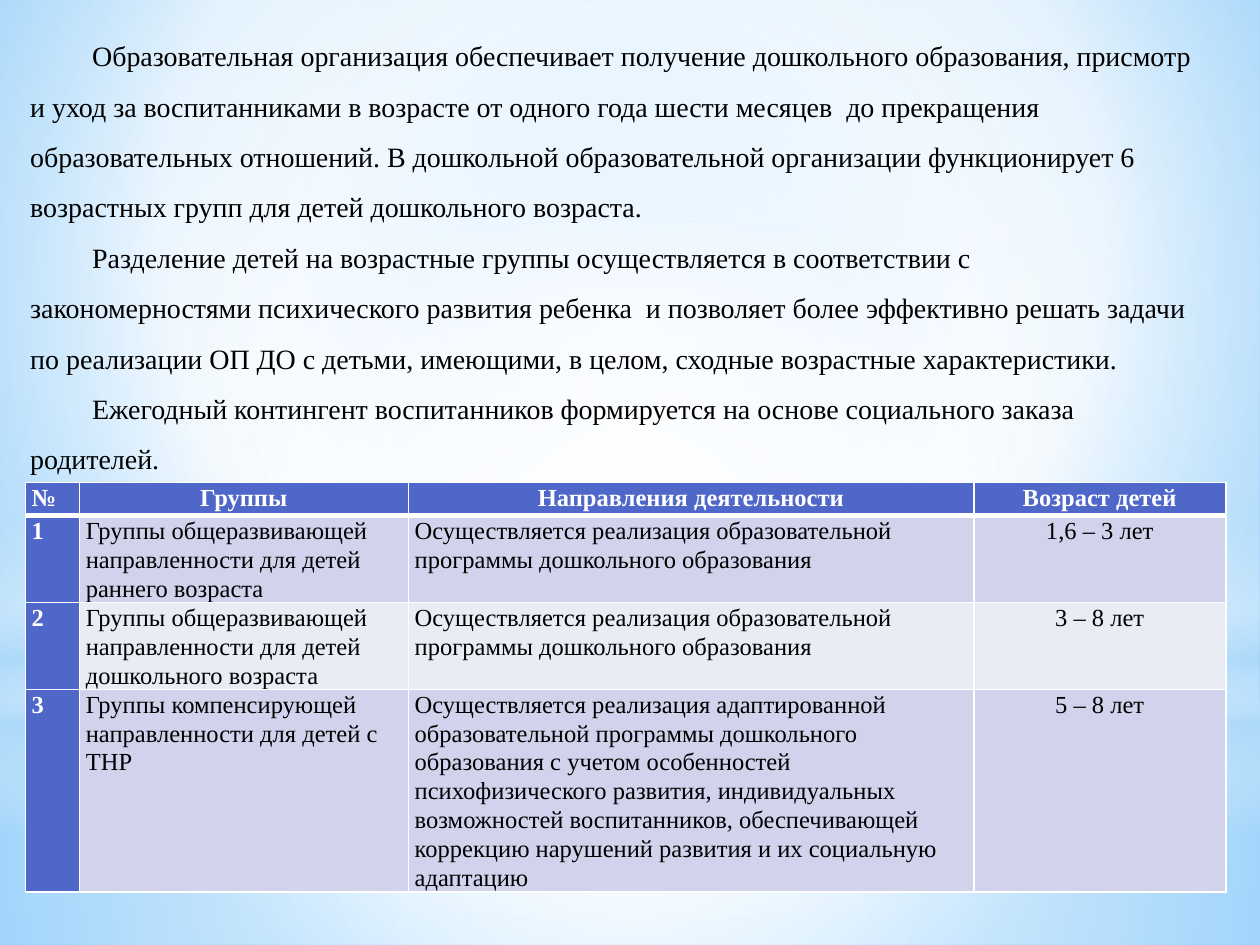
"""Builds the slide on preschool age groups with a table of their activities."""
from dataclasses import dataclass

from lxml import etree
from pptx import Presentation
from pptx.dml.color import RGBColor
from pptx.enum.shapes import MSO_SHAPE
from pptx.enum.text import MSO_ANCHOR, PP_ALIGN
from pptx.oxml import parse_xml
from pptx.oxml.ns import nsdecls, qn
from pptx.util import Cm, Pt

RECT, OVAL = MSO_SHAPE.RECTANGLE, MSO_SHAPE.OVAL
LEFT, CENTER = PP_ALIGN.LEFT, PP_ALIGN.CENTER
MIDDLE = MSO_ANCHOR.MIDDLE
FONT = "Times New Roman"
WHITE, BLACK, SKY, ACCENT = "FFFFFF", "000000", "B4DCFA", "4E67C8"
BANDS = ("D0D3EB", "E9EBF5")
W, H = 25.4, 19.05


@dataclass(frozen=True)
class Stop:
    pos: int
    color: str
    alpha: int = 100


@dataclass(frozen=True)
class Glow:
    kind: MSO_SHAPE
    top: float
    height: float
    stops: tuple[Stop, ...]
    radial: bool = True


BACKGROUND = (Stop(0, "9ED5FF"), Stop(60, WHITE), Stop(100, "5BB9FF"))
GLOWS = (
    Glow(RECT, 14.17, 4.88, (Stop(0, WHITE, 91), Stop(37, WHITE, 76), Stop(100, SKY, 79))),
    Glow(RECT, 0, 14.17, (Stop(0, WHITE, 89), Stop(48, WHITE, 62), Stop(100, SKY, 79))),
    Glow(RECT, 10.46, 6.35, (Stop(0, WHITE, 0), Stop(29, WHITE, 30), Stop(45, SKY, 40),
                             Stop(55, WHITE, 26), Stop(65, SKY, 60), Stop(100, WHITE, 0)), False),
    Glow(OVAL, 4.45, 14.17, (Stop(0, WHITE), Stop(56, WHITE, 0))),
)
INTRO = (
    "Образовательная организация обеспечивает получение дошкольного образования, присмотр и уход "
    "за воспитанниками в возрасте от одного года шести месяцев  до прекращения образовательных "
    "отношений. В дошкольной образовательной организации функционирует 6 возрастных групп для "
    "детей дошкольного возраста.",
    "Разделение детей на возрастные группы осуществляется в соответствии с закономерностями "
    "психического развития ребенка  и позволяет более эффективно решать задачи по реализации "
    "ОП ДО с детьми, имеющими, в целом, сходные возрастные характеристики.",
    "Ежегодный контингент воспитанников формируется на основе социального заказа родителей.",
)
GENERAL = "Группы общеразвивающей направленности для детей "
PROGRAM = "Осуществляется реализация образовательной программы дошкольного образования"
ADAPTED = (
    "Осуществляется реализация адаптированной образовательной программы дошкольного образования "
    "с учетом особенностей психофизического развития, индивидуальных возможностей воспитанников, "
    "обеспечивающей коррекцию нарушений развития и их социальную адаптацию"
)
ROWS = (
    ("№", "Группы", "Направления деятельности", "Возраст детей"),
    ("1", GENERAL + "раннего возраста", PROGRAM, "1,6 – 3 лет"),
    ("2", GENERAL + "дошкольного возраста", PROGRAM, "3 – 8 лет"),
    ("3", "Группы компенсирующей направленности для детей с ТНР", ADAPTED, "5 – 8 лет"),
)
COL_WIDTHS = (1.09, 6.63, 11.4, 5.08)
ROW_HEIGHTS = (0.66, 1.75, 1.75, 4.09)


def rgb(color: str) -> RGBColor:
    return RGBColor.from_string(color)


def set_gradient(parent, stops: tuple[Stop, ...], radial=True, focus=(50, 50, 50, 50)) -> None:
    """Swaps the solid fill inside parent for a gradient."""
    gs = "".join(
        f'<a:gs pos="{st.pos * 1000}"><a:srgbClr val="{st.color}">'
        f'<a:alpha val="{st.alpha * 1000}"/></a:srgbClr></a:gs>' for st in stops)
    l, t, r, b = (v * 1000 for v in focus)
    shade = (f'<a:path path="circle"><a:fillToRect l="{l}" t="{t}" r="{r}" b="{b}"/></a:path>'
             if radial else '<a:lin ang="5400000" scaled="0"/>')
    grad = parse_xml(f'<a:gradFill {nsdecls("a")} rotWithShape="1">'
                     f'<a:gsLst>{gs}</a:gsLst>{shade}</a:gradFill>')
    parent.replace(parent.find(qn("a:solidFill")), grad)


def add_glow(s, glow: Glow) -> None:
    sp = s.shapes.add_shape(glow.kind, 0, Cm(glow.top), Cm(W), Cm(glow.height))
    sp.shadow.inherit = False
    sp.line.fill.background()
    sp.fill.solid()
    set_gradient(sp._element.spPr, glow.stops, glow.radial)


def add_text(p, text: str, size: float, color: str, spacing: float, bold=False) -> None:
    p.line_spacing = spacing
    r = p.add_run()
    r.text = text
    r.font.name, r.font.size, r.font.bold = FONT, Pt(size), bold
    r.font.color.rgb = rgb(color)


def set_borders(cell, top: float, bottom: float) -> None:
    tc_pr = cell._tc.get_or_add_tcPr()
    for side, width in (("L", 1), ("R", 1), ("T", top), ("B", bottom)):
        ln = etree.SubElement(tc_pr, qn(f"a:ln{side}"), w=str(Pt(width)))
        fill = etree.SubElement(ln, qn("a:solidFill"))
        etree.SubElement(fill, qn("a:srgbClr"), val=WHITE)


def add_groups_table(s) -> None:
    tbl = s.shapes.add_table(len(ROWS), len(COL_WIDTHS), Cm(0.51), Cm(9.73),
                             Cm(sum(COL_WIDTHS)), Cm(sum(ROW_HEIGHTS))).table
    tbl.first_col = True
    for col, width in zip(tbl.columns, COL_WIDTHS):
        col.width = Cm(width)
    for i, (texts, height) in enumerate(zip(ROWS, ROW_HEIGHTS)):
        tbl.rows[i].height = Cm(height)
        for j, text in enumerate(texts):
            cell = tbl.cell(i, j)
            head = i == 0 or j == 0
            cell.margin_left = cell.margin_right = Cm(0.13)
            cell.margin_top = cell.margin_bottom = 0
            set_borders(cell, 3 if i == 1 else 1, 3 if i == 0 else 1)
            cell.fill.solid()
            cell.fill.fore_color.rgb = rgb(ACCENT if head else BANDS[(i - 1) % 2])
            p = cell.text_frame.paragraphs[0]
            p.alignment = CENTER if j == 3 or (i == 0 and j > 0) else LEFT
            add_text(p, text, 14, WHITE if head else BLACK, 1.07, head)


def add_intro(s) -> None:
    tf = s.shapes.add_textbox(Cm(0.36), Cm(0.33), Cm(24), Cm(9.37)).text_frame
    tf.word_wrap = True
    tf.vertical_anchor = MIDDLE
    for i, text in enumerate(INTRO):
        p = tf.add_paragraph() if i else tf.paragraphs[0]
        p._p.get_or_add_pPr().set("indent", str(Cm(1.25)))
        add_text(p, text, 16, BLACK, 1.5)


def main() -> None:
    prs = Presentation()
    prs.slide_width, prs.slide_height = Cm(W), Cm(H)
    s = prs.slides.add_slide(prs.slide_layouts[6])
    s.background.fill.solid()
    set_gradient(s._element.find(".//" + qn("p:bgPr")), BACKGROUND, focus=(20, 10, 20, 60))
    for glow in GLOWS:
        add_glow(s, glow)
    add_groups_table(s)
    add_intro(s)
    prs.save("out.pptx")


if __name__ == "__main__":
    main()
